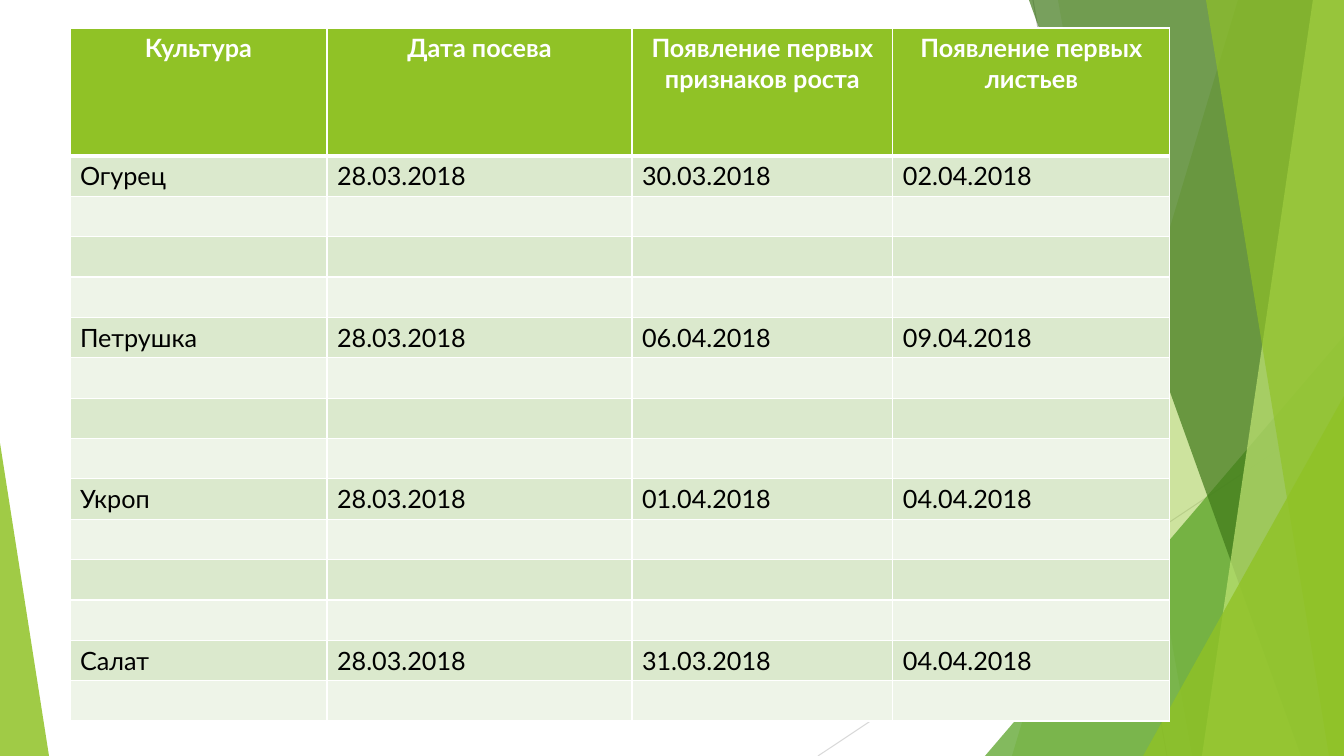
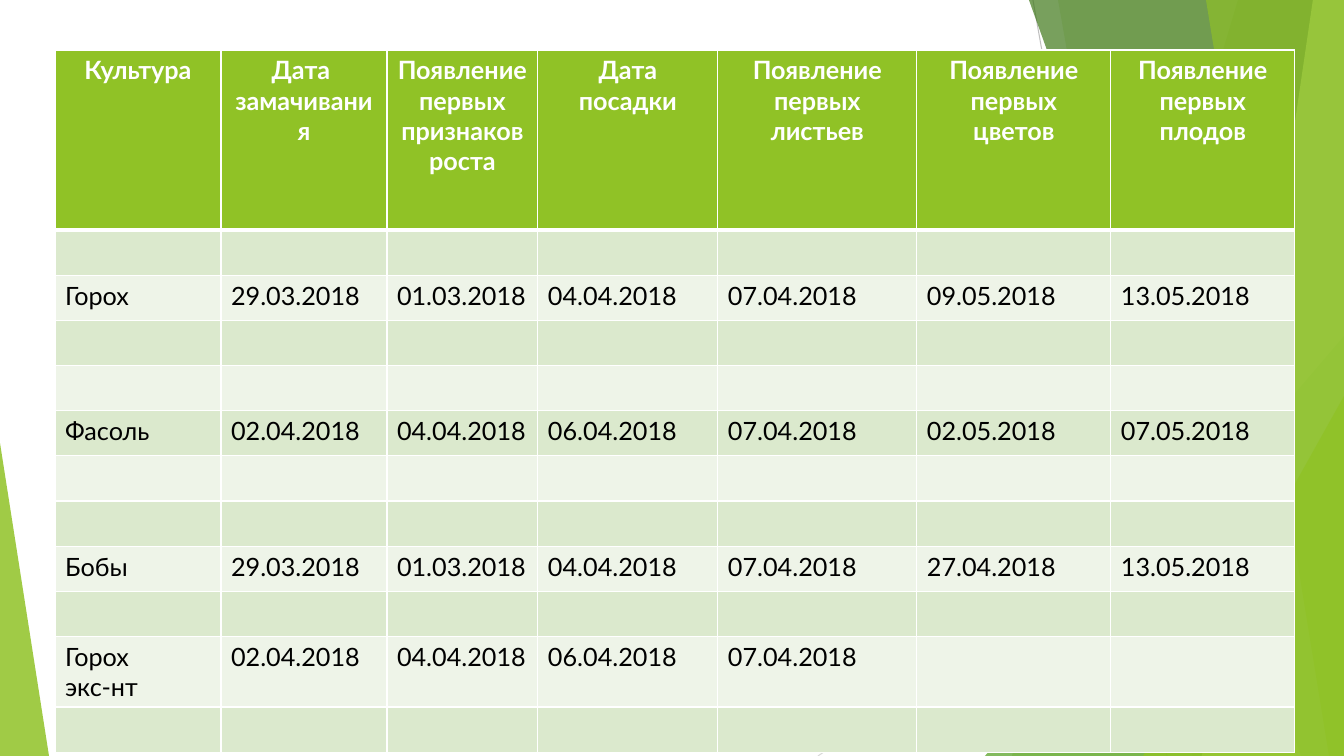
from dataclasses import dataclass

from lxml import etree
from pptx import Presentation
from pptx import util as u
from pptx.dml.color import RGBColor
from pptx.enum import shapes, text
from pptx.oxml import ns

WIDTH, HEIGHT = 1344, 756
EMU_PER_PX = u.Inches(13.3333333) / WIDTH


@dataclass(frozen=True)
class Theme:
    font: str = "Lato"
    text_size: int = 18
    lime: str = "90C226"
    pale_lime: str = "C0E474"
    green: str = "54A021"
    dark_green: str = "3F7819"
    band_dark: str = "DBE9CD"
    band_light: str = "EEF4E8"
    white: str = "FFFFFF"
    black: str = "000000"
    grey: str = "BFBFBF"
    light_grey: str = "D9D9D9"
    hairline: float = 0.75
    border: int = 1
    header_border: int = 3


def px(length):
    return u.Emu(round(length * EMU_PER_PX))


def rgb(colour):
    return RGBColor.from_string(colour)


def add_child(parent, tag, **attributes):
    return etree.SubElement(parent, ns.qn(tag), attributes)


class Deck:
    def __init__(self, theme):
        self.theme = theme
        self.presentation = Presentation()
        self.presentation.slide_width = px(WIDTH)
        self.presentation.slide_height = px(HEIGHT)
        self.slide = None

    def add_slide(self):
        self.slide = self.presentation.slides.add_slide(self.presentation.slide_layouts[6])
        self.backdrop()

    def line(self, start, end, colour):
        connector = self.slide.shapes.add_connector(
            shapes.MSO_CONNECTOR.STRAIGHT, *(px(value) for value in (*start, *end)))
        connector.line.color.rgb = rgb(colour)
        connector.line.width = u.Pt(self.theme.hairline)
        add_child(connector._element.spPr, "a:effectLst")

    def paint(self, shape, colour, opacity):
        """Fill without outline; opacity is a percentage."""
        shape.shadow.inherit = False
        shape.line.fill.background()
        shape.fill.solid()
        shape.fill.fore_color.rgb = rgb(colour)
        colour_element = shape._element.spPr.find(".//" + ns.qn("a:srgbClr"))
        add_child(colour_element, "a:alpha", val=str(opacity * 1000))

    def shard(self, top_x, bottom_x, colour, opacity):
        """Full-height panel with a slanted left edge, reaching the right slide edge."""
        builder = self.slide.shapes.build_freeform(px(top_x), px(0))
        corners = [(WIDTH, 0), (WIDTH, HEIGHT), (bottom_x, HEIGHT)]
        builder.add_line_segments([(px(x), px(y)) for x, y in corners], close=True)
        self.paint(builder.convert_to_shape(), colour, opacity)

    def triangle(self, left, top, width, apex, colour, opacity):
        """Triangle standing on the bottom edge; apex runs from 0 (left) to 1 (right)."""
        shape = self.slide.shapes.add_shape(
            shapes.MSO_SHAPE.ISOSCELES_TRIANGLE,
            px(left), px(top), px(width), px(HEIGHT - top))
        shape.adjustments[0] = apex
        self.paint(shape, colour, opacity)

    def backdrop(self):
        theme = self.theme
        self.line((1033, 0), (1167, HEIGHT), theme.grey)
        self.line((WIDTH, 406), (818, HEIGHT), theme.light_grey)
        self.shard(1238, 1012, theme.lime, 30)
        self.shard(1058, 1192, theme.lime, 20)
        self.triangle(985, 336, 359, 1, theme.green, 72)
        self.shard(1029, 1301, theme.dark_green, 70)
        self.shard(1313, 1202, theme.pale_lime, 70)
        self.shard(1206, 1329, theme.lime, 65)
        self.triangle(1143, 396, 201, 1, theme.lime, 80)
        self.triangle(0, 443, 49, 0, theme.lime, 85)

    def cell_borders(self, cell, row_index):
        theme = self.theme
        widths = {
            "a:lnL": theme.border,
            "a:lnR": theme.border,
            "a:lnT": theme.header_border if row_index == 1 else theme.border,
            "a:lnB": theme.header_border if row_index == 0 else theme.border,
        }
        properties = cell._tc.get_or_add_tcPr()
        for tag, width in widths.items():
            border = add_child(properties, tag, w=str(u.Pt(width)))
            add_child(add_child(border, "a:solidFill"), "a:srgbClr", val=theme.white)

    def fill_cell(self, cell, row_index, value):
        theme = self.theme
        is_header = row_index == 0
        band = theme.band_dark if row_index % 2 else theme.band_light
        self.cell_borders(cell, row_index)
        cell.fill.solid()
        cell.fill.fore_color.rgb = rgb(theme.lime if is_header else band)
        cell.text_frame.text = value
        for paragraph in cell.text_frame.paragraphs:
            paragraph.alignment = text.PP_ALIGN.CENTER if is_header else text.PP_ALIGN.LEFT
            paragraph.font.name = theme.font
            paragraph.font.size = u.Pt(theme.text_size)
            paragraph.font.bold = is_header
            paragraph.font.color.rgb = rgb(theme.white if is_header else theme.black)

    def table(self, left, top, column_widths, header_height, body_height, header, body_rows, filled):
        """Banded table; filled maps a row number to its values, other body rows stay empty."""
        table = self.slide.shapes.add_table(
            body_rows + 1, len(header), px(left), px(top),
            px(sum(column_widths)), px(header_height + body_height)).table
        for column, width in zip(table.columns, column_widths):
            column.width = px(width)
        rows = {0: header, **filled}
        for row_index, row in enumerate(table.rows):
            row.height = px(body_height / body_rows if row_index else header_height)
            values = rows.get(row_index, [])
            for column_index, cell in enumerate(row.cells):
                value = values[column_index] if column_index < len(values) else ""
                self.fill_cell(cell, row_index, value)


def main():
    deck = Deck(Theme())

    deck.add_slide()
    deck.table(
        70, 28, [257, 305, 261, 277], header_height=128, body_height=564,
        header=["Культура", "Дата посева", "Появление первых признаков роста",
                "Появление первых листьев"],
        body_rows=14,
        filled={
            1: ["Огурец", "28.03.2018", "30.03.2018", "02.04.2018"],
            5: ["Петрушка", "28.03.2018", "06.04.2018", "09.04.2018"],
            9: ["Укроп", "28.03.2018", "01.04.2018", "04.04.2018"],
            13: ["Салат", "28.03.2018", "31.03.2018", "04.04.2018"],
        })

    deck.add_slide()
    deck.table(
        55, 50, [166, 166, 151, 180, 199, 194, 184], header_height=180, body_height=497,
        header=["Культура", "Дата \nзамачивания", "Появление первых признаков роста",
                "Дата посадки", "Появление первых листьев", "Появление первых цветов",
                "Появление первых плодов"],
        body_rows=11,
        filled={
            2: ["Горох", "29.03.2018", "01.03.2018", "04.04.2018", "07.04.2018",
                "09.05.2018", "13.05.2018"],
            5: ["Фасоль", "02.04.2018", "04.04.2018", "06.04.2018", "07.04.2018",
                "02.05.2018", "07.05.2018"],
            8: ["Бобы", "29.03.2018", "01.03.2018", "04.04.2018", "07.04.2018",
                "27.04.2018", "13.05.2018"],
            10: ["Горох\nэкс-нт", "02.04.2018", "04.04.2018", "06.04.2018", "07.04.2018"],
        })

    deck.presentation.save("out.pptx")


if __name__ == "__main__":
    main()
